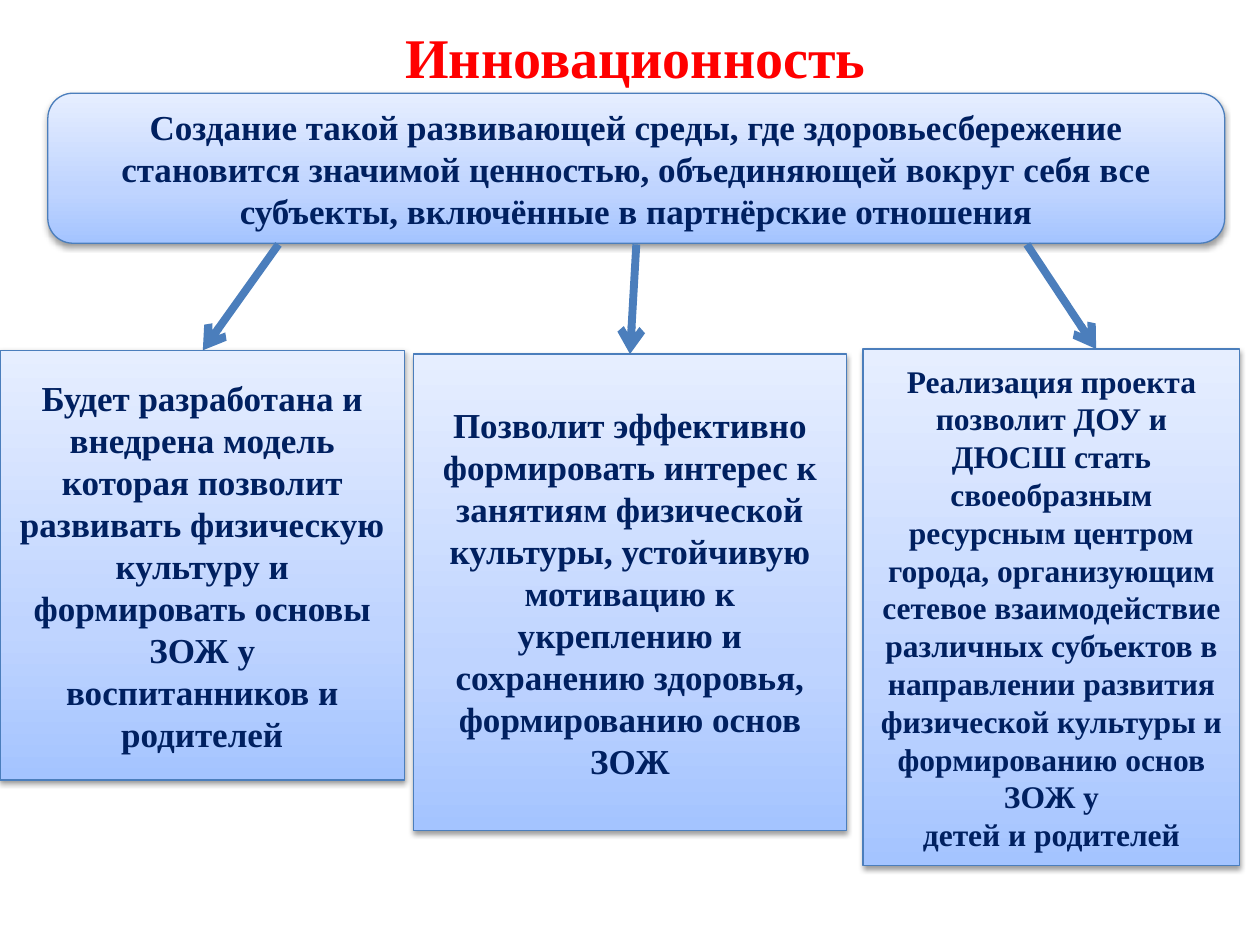
from lxml import etree
from pptx import Presentation
from pptx import util as u
from pptx.dml.color import RGBColor
from pptx.enum import shapes, text
from pptx.oxml import parse_xml
from pptx.oxml.ns import nsdecls, qn

COLORS = {"title": "FF0000", "text": "002060", "edge": "4B7EBC", "shadow": "000000",
          "low": "A4C4FF", "middle": "BFD4FF", "high": "E6EEFF"}
FONT = "Times New Roman"
GOAL = ("Создание такой развивающей среды, где здоровьесбережение становится значимой "
        "ценностью, объединяющей вокруг себя все субъекты, включённые в партнёрские отношения")
RESULTS = [
    ((0, 2.78, 3.21, 3.41), 20,
     "Будет разработана и внедрена модель которая позволит развивать физическую "
     "культуру и формировать основы ЗОЖ у\vвоспитанников и родителей"),
    ((3.28, 2.81, 3.44, 3.78), 20,
     "Позволит эффективно формировать интерес к занятиям физической культуры, "
     "устойчивую мотивацию к укреплению и сохранению здоровья, формированию основ ЗОЖ"),
    ((6.85, 2.77, 2.99, 4.1), 18,
     "Реализация проекта позволит ДОУ и ДЮСШ стать своеобразным ресурсным центром "
     "города, организующим сетевое взаимодействие различных субъектов в направлении "
     "развития физической культуры и формированию основ ЗОЖ у\nдетей и родителей"),
]
ARROWS = [((2.21, 1.94), (1.61, 2.78)), ((5.05, 1.94), (5, 2.81)), ((8.15, 1.94), (8.7, 2.77))]


def write(shape, words, size, color, anchor):
    """Fill a shape with centred bold text."""
    frame = shape.text_frame
    frame.text = words
    frame.word_wrap = True
    frame.auto_size = text.MSO_AUTO_SIZE.NONE
    frame.vertical_anchor = anchor
    for para in frame.paragraphs:
        para.alignment = text.PP_ALIGN.CENTER
        for span in para.runs:
            span.font.name = FONT
            span.font.size = u.Pt(size)
            span.font.bold = True
            span.font.color.rgb = RGBColor.from_string(COLORS[color])


def add_title(page, box, words):
    """Move and format the title placeholder."""
    title = page.shapes.title
    title.left, title.top, title.width, title.height = map(u.Inches, box)
    write(title, words, 32, "title", text.MSO_ANCHOR.TOP)


def add_panel(page, kind, box, words, size):
    """Add a shaded panel with a soft shadow and centred text."""
    panel = page.shapes.add_shape(kind, *map(u.Inches, box))
    panel.line.color.rgb = RGBColor.from_string(COLORS["edge"])
    panel.line.width = u.Pt(0.75)
    stops = "".join(
        f'<a:gs pos="{place * 1000}"><a:srgbClr val="{COLORS[name]}"/></a:gs>'
        for place, name in ((0, "low"), (35, "middle"), (100, "high")))
    line = panel.line._get_or_add_ln()
    line.addprevious(parse_xml(
        f'<a:gradFill {nsdecls("a")} rotWithShape="1"><a:gsLst>{stops}</a:gsLst>'
        '<a:lin ang="16200000" scaled="0"/></a:gradFill>'))
    line.addnext(parse_xml(
        f'<a:effectLst {nsdecls("a")}><a:outerShdw blurRad="{u.Pt(3.1)}" dist="{u.Pt(1.6)}" '
        f'dir="5400000" rotWithShape="0"><a:srgbClr val="{COLORS["shadow"]}">'
        '<a:alpha val="38000"/></a:srgbClr></a:outerShdw></a:effectLst>'))
    write(panel, words, size, "text", text.MSO_ANCHOR.MIDDLE)


def add_arrow(page, start, end):
    """Draw a thick arrow between two points."""
    arrow = page.shapes.add_connector(
        shapes.MSO_CONNECTOR.STRAIGHT, *map(u.Inches, start + end))
    arrow.line.color.rgb = RGBColor.from_string(COLORS["edge"])
    arrow.line.width = u.Pt(4.5)
    etree.SubElement(arrow.line._get_or_add_ln(), qn("a:tailEnd"), type="arrow")
    etree.SubElement(arrow._element.spPr, qn("a:effectLst"))


def main():
    """Build the slide about innovation."""
    deck = Presentation()
    deck.slide_width, deck.slide_height = u.Inches(10), u.Inches(7.5)
    page = deck.slides.add_slide(deck.slide_layouts[5])
    add_title(page, (0.73, 0.13, 8.63, 0.64), "Инновационность")
    add_panel(page, shapes.MSO_SHAPE.ROUNDED_RECTANGLE, (0.38, 0.74, 9.34, 1.19), GOAL, 20)
    for start, end in ARROWS:
        add_arrow(page, start, end)
    for box, size, words in RESULTS:
        add_panel(page, shapes.MSO_SHAPE.RECTANGLE, box, words, size)
    deck.save("out.pptx")


if __name__ == "__main__":
    main()
